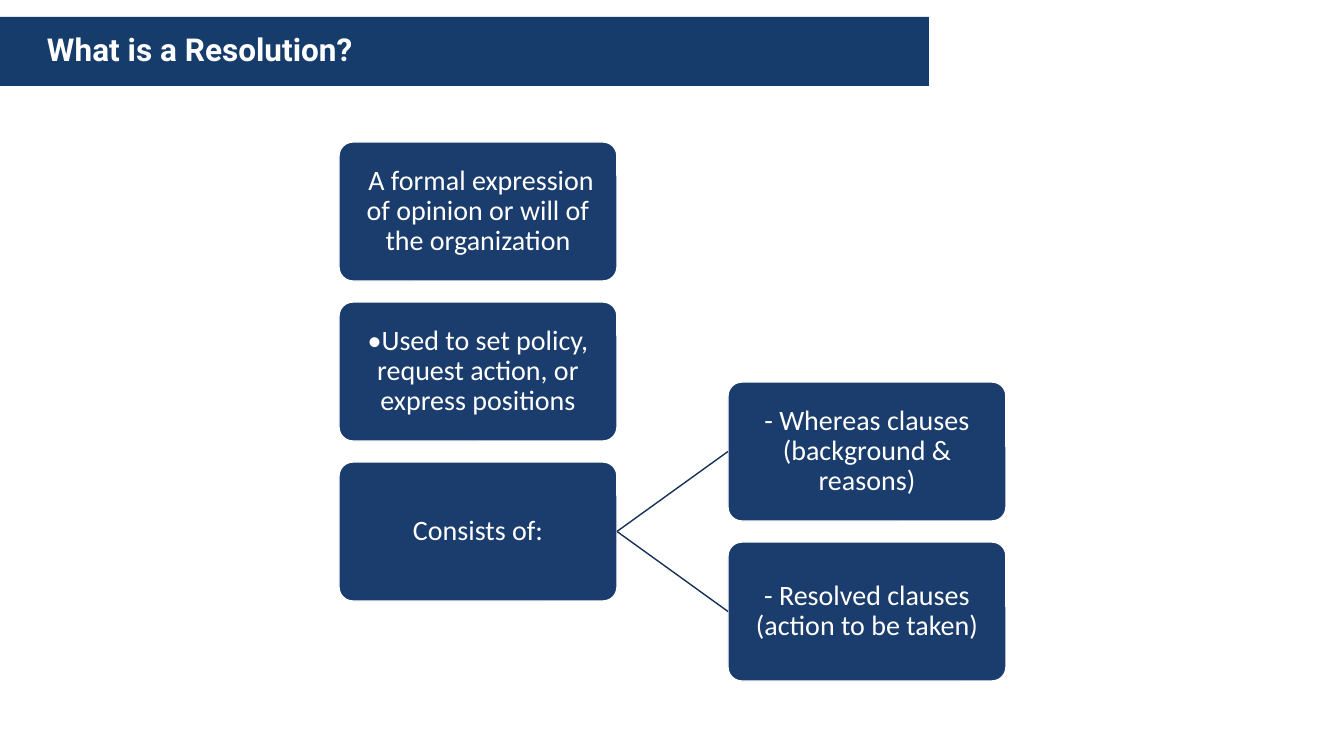
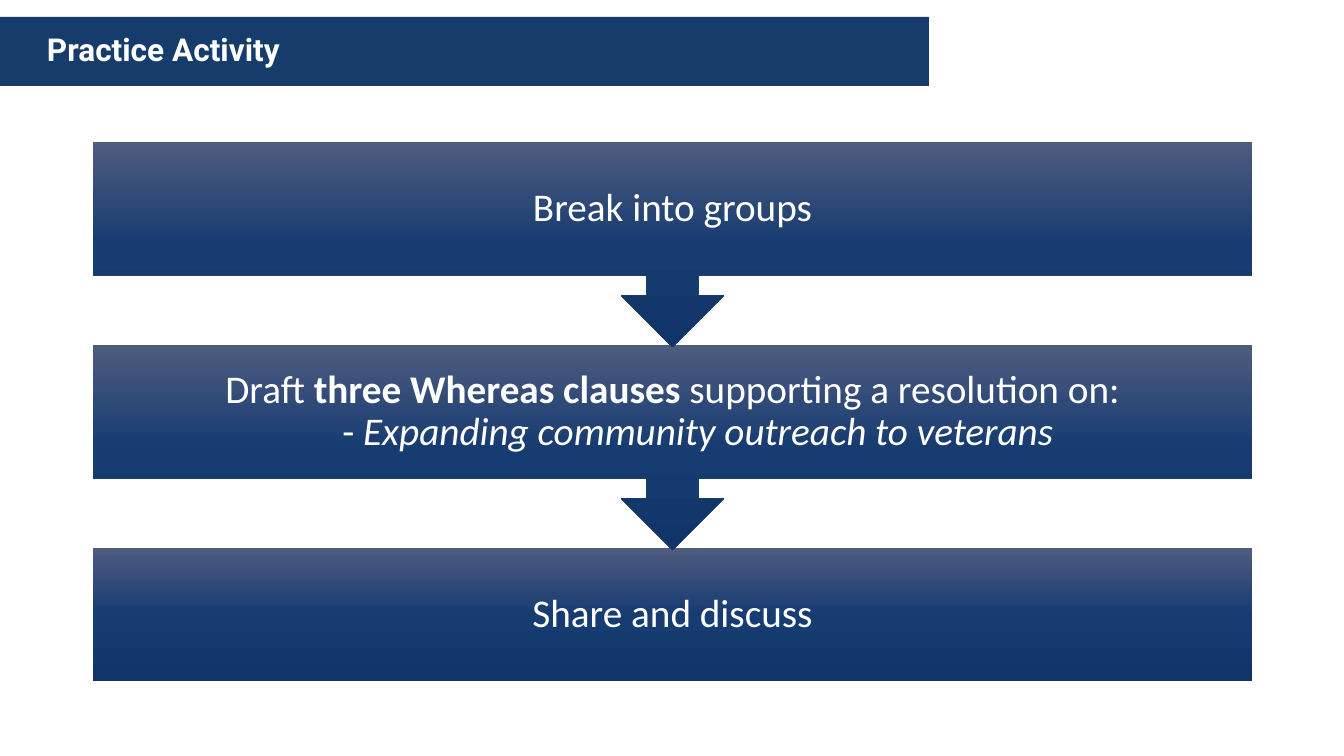
"""Two training slides on resolutions: what they consist of, and a practice activity."""
from copy import deepcopy

from lxml.etree import SubElement
from pptx import Presentation
from pptx.dml.color import RGBColor
from pptx.enum.shapes import MSO_CONNECTOR as LINK, MSO_SHAPE as SHAPE
from pptx.enum.text import MSO_ANCHOR as ANCHOR, PP_ALIGN as ALIGN
from pptx.oxml.ns import qn
from pptx.util import Emu, Pt

COLORS = {
    "white": "FFFFFF",
    "band": "163C6C",
    "card": "1B3D6D",
    "branch": "163157",
    "step_top": "4E5C7F",
    "step_middle": "173C71",
    "step_bottom": "113568",
}
TITLES = ["What is a Resolution?", "Practice Activity"]


def px(*lengths):
    return [Emu(round(length * 12192000 / 1344)) for length in lengths]


def style_text(shape, font, size, align, inset, bold=None):
    frame = shape.text_frame
    frame.word_wrap = True
    frame.vertical_anchor = ANCHOR.MIDDLE
    frame.margin_left, frame.margin_top, frame.margin_right, frame.margin_bottom = px(*[inset] * 4)
    for paragraph in frame.paragraphs:
        paragraph.alignment = align
        paragraph.line_spacing = 0.9
        for run in paragraph.runs:
            run.font.name = font
            run.font.size = Pt(size)
            run.font.color.rgb = RGBColor.from_string(COLORS["white"])
            if bold is not None:
                run.font.bold = bold


prs = Presentation()
prs.slide_width, prs.slide_height = px(1344, 756)

slides = []
for heading in TITLES:
    slide = prs.slides.add_slide(prs.slide_layouts[6])
    band = slide.shapes.add_shape(SHAPE.RECTANGLE, *px(0, 17, 929, 69))
    band.shadow.inherit = False
    band.fill.solid()
    band.fill.fore_color.rgb = RGBColor.from_string(COLORS["band"])
    band.line.fill.background()
    title = slide.shapes.add_textbox(*px(37, 17, 892, 69))
    title.text_frame.text = heading
    title.text_frame.paragraphs[0].space_before = Pt(10)
    style_text(title, "Roboto", 22.5, ALIGN.LEFT, 10, bold=True)
    slides.append(slide)

definition, activity = slides

CARD_W, CARD_H, CARD_PITCH = 278, 139, 160
CARD_COLUMNS = [
    (339, 142, [
        " A formal expression of opinion or will of the organization",
        "•Used to set policy, request action, or express positions",
        "Consists of:",
    ]),
    (728, 382, [
        "- Whereas clauses (background & reasons)",
        "- Resolved clauses (action to be taken)",
    ]),
]
columns = []
for left, top, texts in CARD_COLUMNS:
    cards = []
    for row, text in enumerate(texts):
        card = definition.shapes.add_shape(
            SHAPE.ROUNDED_RECTANGLE, *px(left, top + row * CARD_PITCH, CARD_W, CARD_H))
        card.adjustments[0] = 0.1
        card.shadow.inherit = False
        card.fill.solid()
        card.fill.fore_color.rgb = RGBColor.from_string(COLORS["card"])
        card.line.color.rgb = RGBColor.from_string(COLORS["white"])
        card.line.width = Pt(1)
        card.text_frame.text = text
        style_text(card, "Calibri", 20, ALIGN.CENTER, 5)
        cards.append(card)
    columns.append(cards)

points, clauses = columns
for clause in clauses:
    branch = definition.shapes.add_connector(LINK.STRAIGHT, 0, 0, 0, 0)
    branch.begin_connect(points[-1], 3)
    branch.end_connect(clause, 1)
    branch.line.color.rgb = RGBColor.from_string(COLORS["branch"])
    branch.line.width = Pt(1)
    SubElement(branch._element.spPr, qn("a:effectLst"))

STEP_LEFT, STEP_TOP, STEP_W, STEP_PITCH = 93, 142, 1159, 203
STEPS = [
    (SHAPE.DOWN_ARROW_CALLOUT, 205, [("Break into groups", "plain")]),
    (SHAPE.DOWN_ARROW_CALLOUT, 205, [
        ("Draft ", "plain"),
        ("three Whereas clauses", "bold"),
        (" supporting a resolution on:", "plain"),
        ("\n", "break"),
        ("\t- ", "plain"),
        ("Expanding community outreach to veterans", "italic"),
    ]),
    (SHAPE.RECTANGLE, 133, [("Share and discuss", "plain")]),
]
GRADIENT = [(0, "step_top"), (0.5, "step_middle"), (1, "step_bottom")]

for row, (outline, height, pieces) in reversed(list(enumerate(STEPS))):
    step = activity.shapes.add_shape(
        outline, *px(STEP_LEFT, STEP_TOP + row * STEP_PITCH, STEP_W, height))
    step.shadow.inherit = False
    step.line.fill.background()
    step.fill.gradient()
    step.fill.gradient_angle = 270
    stop_list = step._element.spPr.find(qn("a:gradFill")).find(qn("a:gsLst"))
    stop_list.append(deepcopy(stop_list[-1]))
    for stop, (position, color) in zip(step.fill.gradient_stops, GRADIENT):
        stop.position = position
        stop.color.rgb = RGBColor.from_string(COLORS[color])
    paragraph = step.text_frame.paragraphs[0]
    for text, style in pieces:
        if style == "break":
            paragraph.add_line_break()
            continue
        run = paragraph.add_run()
        run.text = text
        run.font.bold = style == "bold"
        run.font.italic = style == "italic"
    style_text(step, "Calibri", 28, ALIGN.CENTER, 22)

prs.save("out.pptx")
